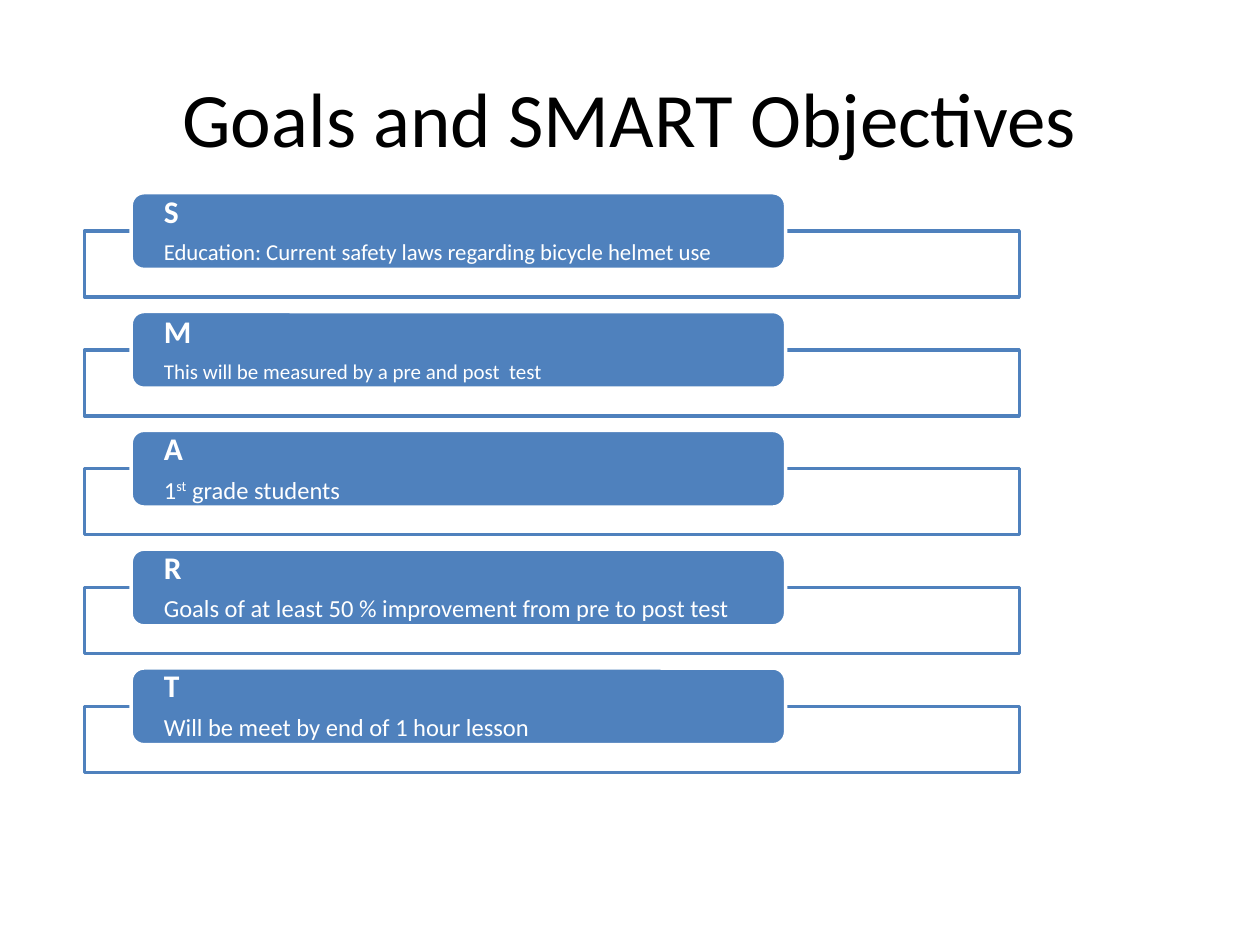
from lxml.etree import SubElement
from pptx import Presentation
from pptx.dml.color import RGBColor
from pptx.enum.shapes import MSO_SHAPE
from pptx.enum.text import MSO_ANCHOR, PP_ALIGN
from pptx.oxml.ns import qn
from pptx.util import Inches, Pt

COLORS = {"accent": "4F81BD", "paper": "FFFFFF", "title": "000000"}
FONT = "Calibri"
OBJECTIVES = [
    ("S", 13, [("Education: Current safety laws regarding bicycle helmet use", 0)]),
    ("M", 12, [("This will be measured by a pre and post  test", 0)]),
    ("A", 14, [("1", 0), ("st", 30), (" grade students", 0)]),
    ("R", 14, [("Goals of at least 50 % improvement from pre to post test", 0)]),
    ("T", 14, [("Will be meet by end of 1 hour lesson", 0)]),
]


def apply(target, values):
    for key, value in values.items():
        setattr(target, key, value)


def color(name):
    return RGBColor.from_string(COLORS[name])


def add_run(paragraph, text, size, ink, bold=False, baseline=0):
    run = paragraph.add_run()
    run.text = text
    apply(run.font, {"name": FONT, "size": Pt(size), "bold": bold})
    run.font.color.rgb = color(ink)
    if baseline:
        run.font._element.set("baseline", str(baseline * 1000))


def add_panel(slide, kind, box, fill, line):
    panel = slide.shapes.add_shape(kind, *(Inches(value) for value in box))
    panel.shadow.inherit = False
    panel.fill.solid()
    panel.fill.fore_color.rgb = color(fill)
    panel.line.color.rgb = color(line)
    panel.line.width = Pt(2)
    return panel


def add_title(slide, box, text):
    title = slide.shapes.title
    apply(title, dict(zip(("left", "top", "width", "height"), map(Inches, box))))
    title.text_frame.vertical_anchor = MSO_ANCHOR.MIDDLE
    heading = title.text_frame.paragraphs[0]
    heading.alignment = PP_ALIGN.CENTER
    add_run(heading, text, 44, "title")


def add_objective(slide, box, letter, size, detail):
    left, top, width, height = box
    label_height = height * 0.735
    frame_top = label_height / 2
    frame = add_panel(slide, MSO_SHAPE.RECTANGLE,
                      (left, top + frame_top, width, height - frame_top), "paper", "accent")
    tint = frame.fill._xPr.find(qn("a:solidFill"))[0]
    SubElement(tint, qn("a:alpha")).set("val", "90000")

    label = add_panel(slide, MSO_SHAPE.ROUNDED_RECTANGLE,
                      (left + width * 0.05, top, width * 0.7, label_height), "accent", "paper")
    text = label.text_frame
    apply(text, {"word_wrap": True, "vertical_anchor": MSO_ANCHOR.MIDDLE,
                 "margin_left": Inches(0.23), "margin_right": Inches(0.23),
                 "margin_top": 0, "margin_bottom": 0})
    initial, description = text.paragraphs[0], text.add_paragraph()
    for paragraph, points in ((initial, 18), (description, size)):
        apply(paragraph, {"alignment": PP_ALIGN.LEFT, "line_spacing": 0.9,
                          "space_after": Pt(points * 0.35)})
    add_run(initial, letter, 18, "paper", bold=True)
    for part, baseline in detail:
        add_run(description, part, size, "paper", baseline=baseline)


def add_objectives(slide, box, objectives):
    left, top, width, height = box
    pitch = height * 0.205
    row_height = height - pitch * (len(objectives) - 1)
    for row, objective in enumerate(objectives):
        add_objective(slide, (left, top + row * pitch, width, row_height), *objective)


def main():
    deck = Presentation()
    apply(deck, {"slide_width": Inches(10), "slide_height": Inches(7.5)})
    slide = deck.slides.add_slide(deck.slide_layouts[5])
    add_title(slide, (0.5, 0.3, 9, 1.25), "Goals and SMART Objectives")
    add_objectives(slide, (0.67, 1.53, 7.42, 4.6), OBJECTIVES)
    deck.save("out.pptx")


if __name__ == "__main__":
    main()
